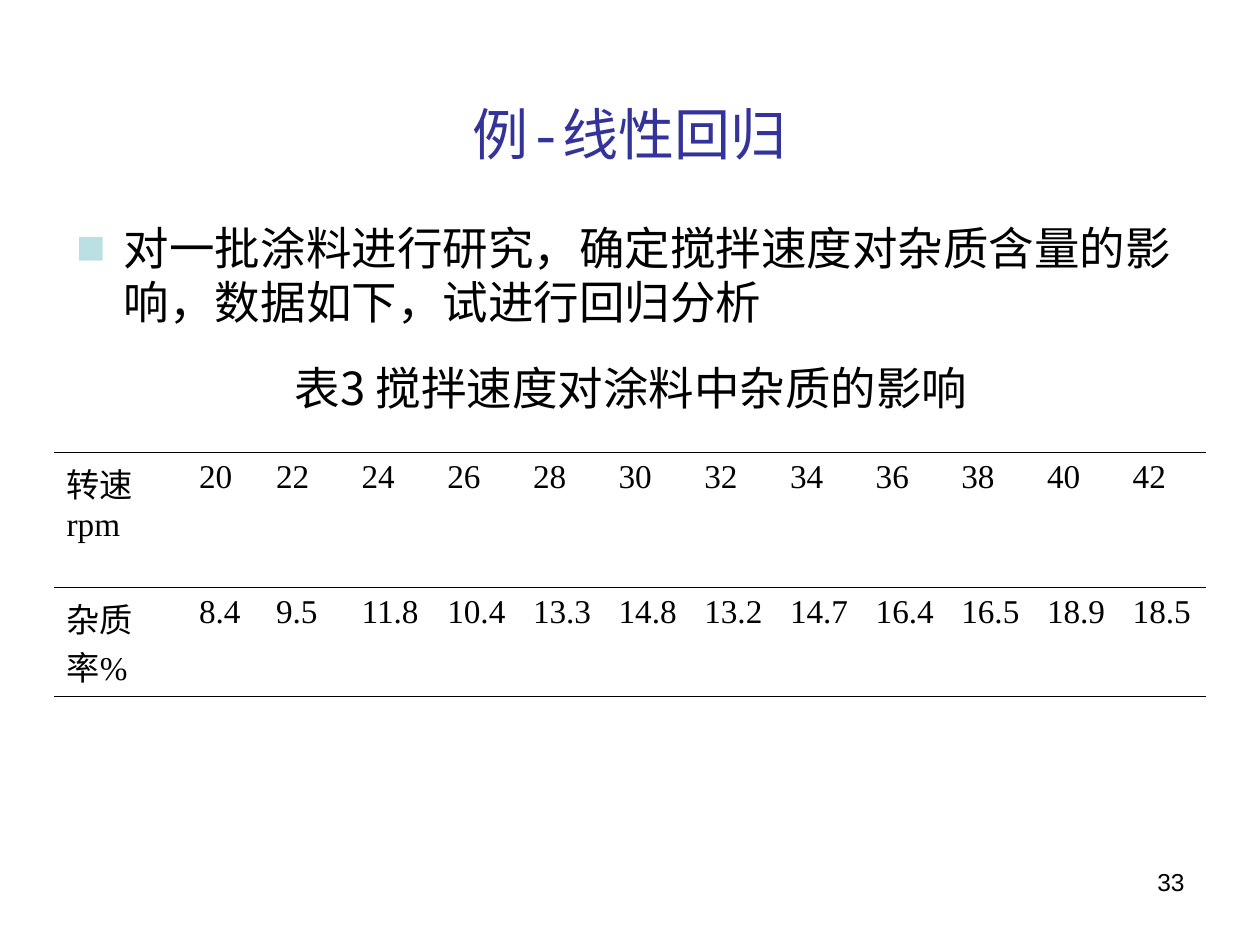
from lxml.etree import SubElement
from pptx import Presentation
from pptx.dml.color import RGBColor
from pptx.enum.text import MSO_ANCHOR, PP_ALIGN
from pptx.oxml import parse_xml
from pptx.oxml.ns import nsdecls, qn
from pptx.util import Cm, Pt

BLACK = RGBColor(0x00, 0x00, 0x00)
NAVY = RGBColor(0x33, 0x33, 0x99)
PALE_TEAL = RGBColor(0xBB, 0xE0, 0xE3)
HAN_FONT = "Noto Sans CJK SC"
PLAIN_TABLE = "{2D5ABB26-0587-4C30-8999-92F81FD0307C}"
SPEEDS = range(20, 43, 2)
IMPURITIES = [8.4, 9.5, 11.8, 10.4, 13.3, 14.8, 13.2, 14.7, 16.4, 16.5, 18.9, 18.5]


def write_text(frame, text, size, font=HAN_FONT, color=BLACK,
               align=PP_ALIGN.LEFT, anchor=MSO_ANCHOR.TOP, spacing=None):
    frame.word_wrap = True
    frame.vertical_anchor = anchor
    para = frame.paragraphs[0]
    para.alignment = align
    if spacing:
        para.line_spacing = spacing
    span = para.add_run()
    span.text = text
    span.font.size = Pt(size)
    span.font.name = font
    span.font.color.rgb = color
    SubElement(span.font._element, qn("a:ea"), typeface=HAN_FONT)
    return para


def add_text(page, box, text, **style):
    frame = page.shapes.add_textbox(*box).text_frame
    return write_text(frame, text, **style)


def add_bullet(para, color):
    properties = para._p.get_or_add_pPr()
    properties.set("marL", str(Cm(0.95)))
    properties.set("indent", str(-Cm(0.95)))
    shade = SubElement(properties, qn("a:buClr"))
    SubElement(shade, qn("a:srgbClr"), val=str(color))
    SubElement(properties, qn("a:buSzPct"), val="65000")
    SubElement(properties, qn("a:buFont"), typeface=HAN_FONT)
    SubElement(properties, qn("a:buChar"), char="■")


def add_rules(cell):
    properties = cell._tc.get_or_add_tcPr()
    for side in ("lnB", "lnT"):
        properties.insert(0, parse_xml(
            f'<a:{side} {nsdecls("a")} w="{Pt(1)}"><a:solidFill>'
            f'<a:srgbClr val="{BLACK}"/></a:solidFill></a:{side}>'))


def add_heading(page, box):
    add_text(page, box, "例-线性回归", size=32, font="Courier New", color=NAVY,
             align=PP_ALIGN.CENTER, anchor=MSO_ANCHOR.MIDDLE, spacing=1.5)


def add_problem(page, box):
    left, top, width, height = box
    para = add_text(page, (left, top, width, Cm(2.46)),
                    "对一批涂料进行研究，确定搅拌速度对杂质含量的影响，数据如下，试进行回归分析",
                    size=26, spacing=Pt(31))
    add_bullet(para, PALE_TEAL)
    caption_top = Cm(2.82)
    add_text(page, (left + Cm(4.39), top + caption_top, Cm(16.2), height - caption_top),
             "表3 搅拌速度对涂料中杂质的影响", size=26, spacing=Pt(31))


def add_data_table(page, box):
    rows = [["转速rpm", *SPEEDS], ["杂质率%", *IMPURITIES]]
    table = page.shapes.add_table(len(rows), len(rows[0]), *box).table
    table.first_row = table.horz_banding = False
    table._tbl.tblPr.find(qn("a:tableStyleId")).text = PLAIN_TABLE
    first, second = Cm(2.67), Cm(1.55)
    rest = int((box[2] - first - second) / (len(rows[0]) - 2))
    for column, width in zip(table.columns, [first, second] + [rest] * (len(rows[0]) - 2)):
        column.width = width
    for row, height, values in zip(table.rows, (Cm(2.72), box[3] - Cm(2.72)), rows):
        row.height = height
        for cell, value in zip(row.cells, values):
            write_text(cell.text_frame, str(value), size=19, font="Times New Roman")
            cell.fill.background()
            add_rules(cell)


def add_page_number(page, box):
    add_text(page, box, "33", size=14, font="Arial", align=PP_ALIGN.RIGHT)


def main():
    deck = Presentation()
    deck.slide_width, deck.slide_height = Cm(25.4), Cm(19.05)
    page = deck.slides.add_slide(deck.slide_layouts[6])
    add_page_number(page, (Cm(18.2), Cm(17.35), Cm(5.93), Cm(1.32)))
    add_heading(page, (Cm(1.27), Cm(0.76), Cm(22.86), Cm(3.18)))
    add_data_table(page, (Cm(1.09), Cm(9.12), Cm(23.22), Cm(4.92)))
    add_problem(page, (Cm(1.3), Cm(4.32), Cm(23.01), Cm(4.17)))
    deck.save("out.pptx")


if __name__ == "__main__":
    main()
